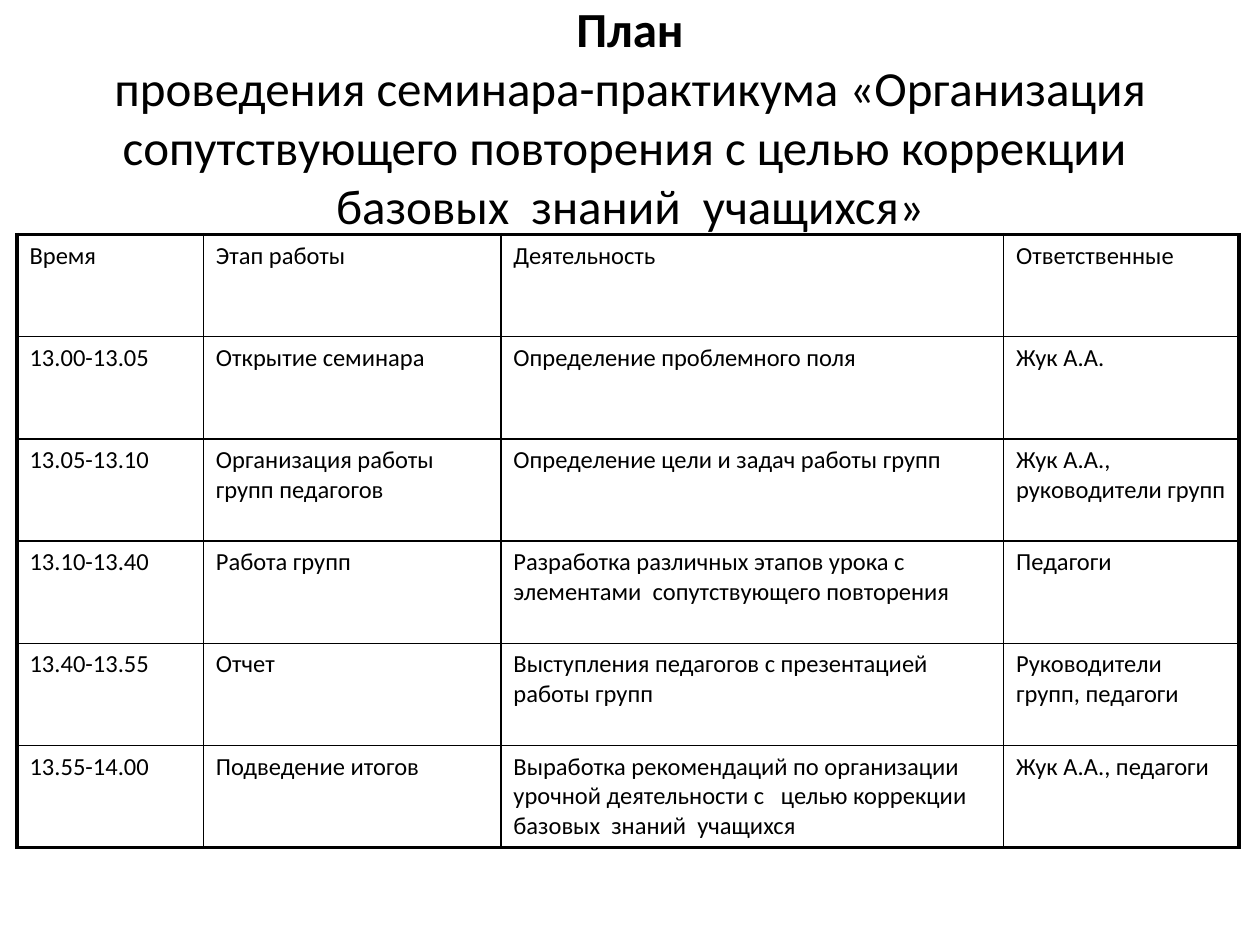
from lxml import etree
from pptx import Presentation
from pptx.dml.color import RGBColor
from pptx.enum.text import MSO_ANCHOR, MSO_AUTO_SIZE, PP_ALIGN
from pptx.oxml.ns import qn
from pptx.util import Pt

MID, TOP = MSO_ANCHOR.MIDDLE, MSO_ANCHOR.TOP
CENTER, LEFT = PP_ALIGN.CENTER, PP_ALIGN.LEFT
FIXED = MSO_AUTO_SIZE.NONE

HEAD = "План"
TOPIC = ("проведения семинара-практикума «Организация сопутствующего "
         "повторения с целью коррекции  базовых  знаний  учащихся»")
ROWS = [
    ("Время", "Этап работы", "Деятельность", "Ответственные"),
    ("13.00-13.05", "Открытие семинара", "Определение проблемного поля", "Жук А.А."),
    ("13.05-13.10", "Организация работы групп педагогов",
     "Определение цели и задач работы групп", "Жук А.А.,  руководители групп"),
    ("13.10-13.40", "Работа групп",
     "Разработка различных этапов урока с  элементами  сопутствующего повторения",
     "Педагоги"),
    ("13.40-13.55", "Отчет", "Выступления педагогов с презентацией работы групп",
     "Руководители групп, педагоги"),
    ("13.55-14.00", "Подведение итогов",
     "Выработка рекомендаций по организации урочной деятельности с   целью "
     "коррекции  базовых  знаний  учащихся", "Жук А.А., педагоги"),
]
COLORS = {"ink": "000000", "page": "FFFFFF"}
WIDTHS = (106.5, 170, 287.3, 134.6)
HIGH = 58.4
GRID, FRAME = 1, 2.25
TITLE_BOX = {"left": 36, "top": 21.6, "width": 648, "height": 90}
TITLE_FRAME = {"word_wrap": True, "auto_size": FIXED, "vertical_anchor": MID}
TITLE_FONT = {"name": "Calibri", "size": Pt(28)}
CELL_FONT = {"name": "Calibri", "size": Pt(14), "bold": False}


def apply(item, values):
    """Set each named attribute on the item."""
    for name, value in values.items():
        setattr(item, name, value)


def style(font, values):
    """Format a font in the ink colour."""
    apply(font, values)
    font.color.rgb = RGBColor.from_string(COLORS["ink"])


def border(cell, sides):
    """Draw the cell borders at the given widths."""
    props = cell._tc.get_or_add_tcPr()
    for spot, (side, width) in enumerate(sides.items()):
        line = etree.Element(qn(f"a:ln{side}"), w=str(Pt(width)))
        fill = etree.SubElement(line, qn("a:solidFill"))
        etree.SubElement(fill, qn("a:srgbClr"), val=COLORS["ink"])
        props.insert(spot, line)


def add_title(slide):
    """Fill the title placeholder."""
    title = slide.shapes.title
    apply(title, {name: Pt(value) for name, value in TITLE_BOX.items()})
    apply(title.text_frame, TITLE_FRAME)
    para = title.text_frame.paragraphs[0]
    para.alignment = CENTER
    for text, bold in ((HEAD, True), (TOPIC, False)):
        if not bold:
            para.add_line_break()
        run = para.add_run()
        run.text = text
        style(run.font, {**TITLE_FONT, "bold": bold})


def add_plan(slide):
    """Build the seminar timetable."""
    last, end = len(ROWS) - 1, len(WIDTHS) - 1
    table = slide.shapes.add_table(
        len(ROWS), len(WIDTHS), Pt(9.7), Pt(134),
        Pt(sum(WIDTHS)), Pt(HIGH * len(ROWS))).table
    apply(table, {"first_row": False, "horz_banding": False})
    for col, width in zip(table.columns, WIDTHS):
        col.width = Pt(width)
    for r, row in enumerate(ROWS):
        table.rows[r].height = Pt(HIGH)
        for c, text in enumerate(row):
            cell = table.cell(r, c)
            apply(cell, {"text": text, "vertical_anchor": TOP})
            cell.fill.background()
            para = cell.text_frame.paragraphs[0]
            para.alignment = LEFT
            style(para.runs[0].font, CELL_FONT)
            edges = {"L": c == 0, "R": c == end, "T": r == 0, "B": r == last}
            border(cell, {side: FRAME if outer else GRID
                          for side, outer in edges.items()})


def main():
    """Build and save the seminar plan slide."""
    deck = Presentation()
    apply(deck, {"slide_width": Pt(720), "slide_height": Pt(540)})
    slide = deck.slides.add_slide(deck.slide_layouts[5])
    back = slide.background.fill
    back.solid()
    back.fore_color.rgb = RGBColor.from_string(COLORS["page"])
    add_title(slide)
    add_plan(slide)
    deck.save("out.pptx")


if __name__ == "__main__":
    main()
